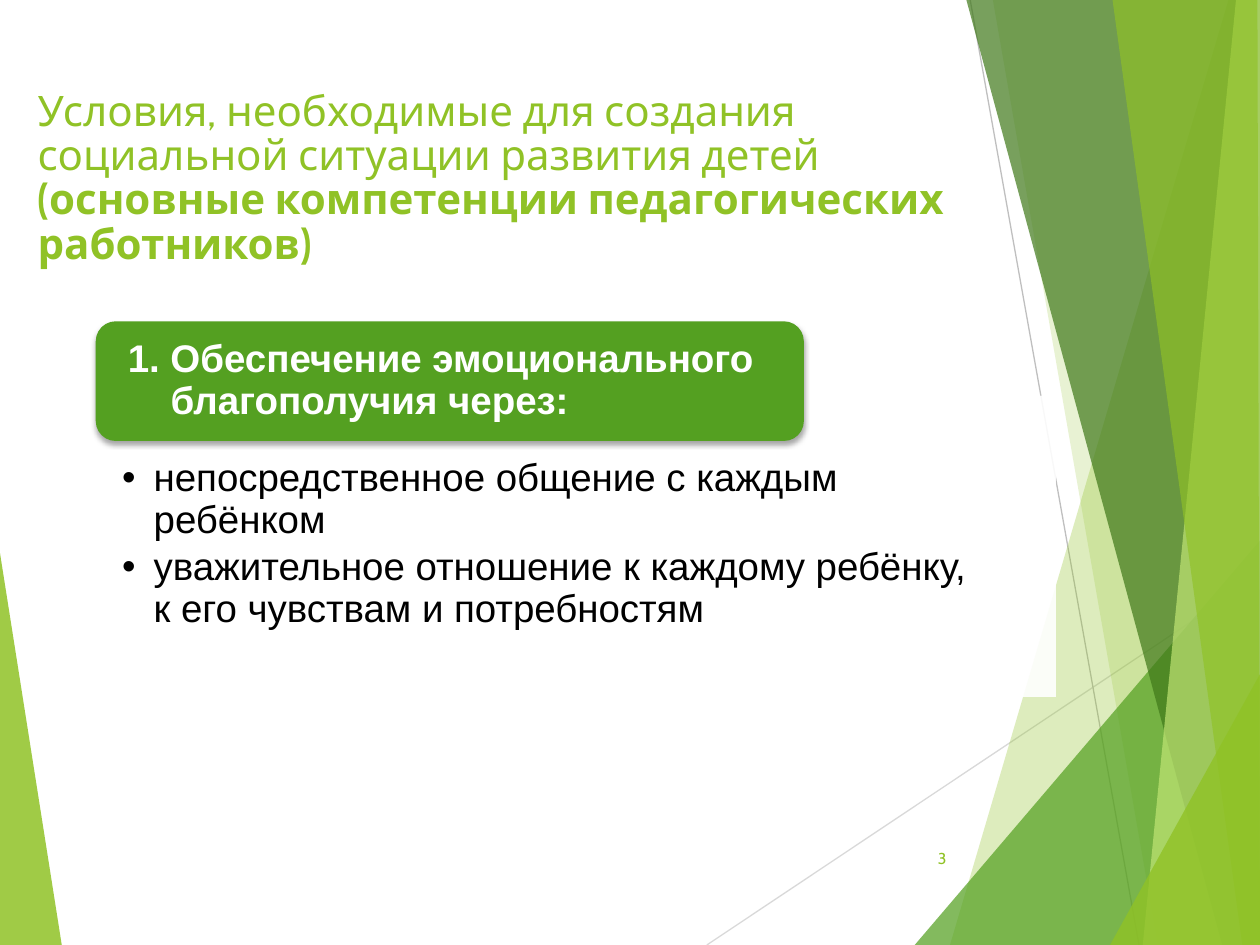
from pptx import Presentation
from pptx.util import Inches, Pt
from pptx.dml.color import RGBColor
from pptx.enum.shapes import MSO_SHAPE as Shape, MSO_CONNECTOR as Link
from pptx.enum.text import MSO_ANCHOR as Anchor, PP_ALIGN as Align
from pptx.oxml import parse_xml
from pptx.oxml.ns import nsdecls
from lxml.etree import SubElement

WIDE, HIGH = Inches(10), Inches(7.5)
COL, ROW = WIDE / 100, HIGH / 75
LIME, GREEN, WHITE, BLACK = "90C226", "54A021", "FFFFFF", "000000"
NS = "{http://schemas.openxmlformats.org/drawingml/2006/main}"

# Outline in columns and rows, colour, opacity in percent
LEFT_FACET = ([(0, 43.9), (4.9, 75), (0, 75)], LIME, 85)
RIGHT_FACETS = [
    ([(97.5, 0), (75.4, 75), (100, 75), (100, 0)], LIME, 30),
    ([(78.8, 0), (91.9, 75), (100, 75), (100, 0)], LIME, 20),
    ([(72.6, 75), (100, 42.9), (100, 75)], GREEN, 72),
    ([(76.7, 0), (97, 75), (100, 75), (100, 0)], "3F7819", 70),
    ([(98.1, 0), (90.7, 75), (100, 75), (100, 0)], "C0E474", 70),
    ([(88.3, 0), (98.6, 75), (100, 75), (99.8, 0)], LIME, 65),
    ([(88.1, 75), (100, 53.5), (100, 75)], LIME, 80),
]
RAYS = [((56.1, 75), (100, 45.7), "D9D9D9"), ((77, 0), (90.4, 75), "BFBFBF")]


def rgb(code):
    return RGBColor.from_string(code)


def place(box):
    x, y, w, h = box
    return [round(v) for v in (x * COL, y * ROW, w * COL, h * ROW)]


def paint(shape, code, alpha=100):
    shape.shadow.inherit = False
    shape.fill.solid()
    shape.fill.fore_color.rgb = rgb(code)
    shape.line.fill.background()
    if alpha < 100:
        tone = shape.fill._xPr.find(f".//{NS}srgbClr")
        SubElement(tone, NS + "alpha", val=str(alpha * 1000))


def style(runs, font, size, code, bold=False):
    for run in runs:
        run.font.name, run.font.size, run.font.bold = font, Pt(size), bold
        run.font.color.rgb = rgb(code)


def add_text(slide, box, pads=(0.1, 0.05, 0.1, 0.05), anchor=Anchor.TOP):
    frame = slide.shapes.add_textbox(*place(box)).text_frame
    frame.word_wrap = True
    frame.vertical_anchor = anchor
    (frame.margin_left, frame.margin_top,
     frame.margin_right, frame.margin_bottom) = map(Inches, pads)
    return frame


def hang(para, inches, mark=None):
    """Hanging indent, with a bullet if a mark is given."""
    props = para._p.get_or_add_pPr()
    props.set("marL", str(Inches(inches)))
    props.set("indent", str(-Inches(inches)))
    if mark:
        SubElement(props, NS + "buFont", typeface="Arial")
        SubElement(props, NS + "buChar", char=mark)


def add_facet(slide, points, code, alpha):
    spots = [(round(x * COL), round(y * ROW)) for x, y in points]
    path = slide.shapes.build_freeform(*spots[0])
    path.add_line_segments(spots[1:], close=True)
    paint(path.convert_to_shape(), code, alpha)


def add_ray(slide, start, end, code):
    ray = slide.shapes.add_connector(Link.STRAIGHT, *place(start + end))
    ray.line.color.rgb = rgb(code)
    ray.line.width = Pt(0.75)
    SubElement(ray._element.spPr, NS + "effectLst")


def add_decor(slide):
    add_facet(slide, *LEFT_FACET)
    for ray in RAYS:
        add_ray(slide, *ray)
    for facet in RIGHT_FACETS:
        add_facet(slide, *facet)


def add_title(slide, box, plain, strong):
    para = add_text(slide, box).paragraphs[0]
    para.line_spacing = 0.88
    for words, bold in ((plain, False), (strong, True)):
        run = para.add_run()
        run.text = words
        style([run], "Cabin", 24, LIME, bold)


def add_number(slide, box, number):
    frame = add_text(slide, box, anchor=Anchor.MIDDLE)
    frame.text = number
    para = frame.paragraphs[0]
    para.alignment = Align.RIGHT
    style(para.runs, "Cabin", 9, LIME)


def add_points(slide, box, points):
    panel = slide.shapes.add_shape(Shape.RECTANGLE, *place(box))
    paint(panel, WHITE, 90)
    frame = add_text(slide, box, (0.62, 0.5, 0.62, 0.17))
    frame.text = "\n".join(points)
    for para in frame.paragraphs:
        para.line_spacing = 0.9
        para.space_after = Pt(3.3)
        hang(para, 0.25, "•")
        style(para.runs, "Arial", 22, BLACK)


def add_banner(slide, box, words):
    x, y, w, h = box
    plate = slide.shapes.add_shape(Shape.ROUNDED_RECTANGLE, *place(box))
    paint(plate, GREEN)
    plate._element.spPr.find(NS + "effectLst").append(parse_xml(
        f'<a:outerShdw {nsdecls("a")} blurRad="{Pt(3)}" dist="{Pt(2)}" '
        f'dir="5400000" rotWithShape="0"><a:srgbClr val="{BLACK}">'
        '<a:alpha val="35000"/></a:srgbClr></a:outerShdw>'))
    inner = (x + 0.45, y + 0.45, w - 0.9, h - 0.9)
    frame = add_text(slide, inner, (0.21, 0, 0.21, 0), Anchor.MIDDLE)
    frame.text = words
    para = frame.paragraphs[0]
    para.line_spacing = 0.9
    hang(para, 0.34)
    style(para.runs, "Arial", 22, WHITE, True)


def main():
    deck = Presentation()
    deck.slide_width, deck.slide_height = WIDE, HIGH
    slide = deck.slides.add_slide(deck.slide_layouts[6])
    add_decor(slide)
    add_title(slide, (2, 6.7, 80.3, 14.4),
              "Условия, необходимые для создания социальной ситуации развития детей ",
              "(основные компетенции педагогических работников)")
    add_number(slide, (70.5, 66.1, 5.6, 4), "3")
    add_points(slide, (3.5, 31.4, 80.3, 23.9), [
        "непосредственное общение с каждым ребёнком",
        "уважительное отношение к каждому ребёнку, к его чувствам и потребностям"])
    add_banner(slide, (7.6, 25.5, 56.2, 9.5),
               "1. Обеспечение эмоционального\vблагополучия через:")
    deck.save("out.pptx")


if __name__ == "__main__":
    main()
